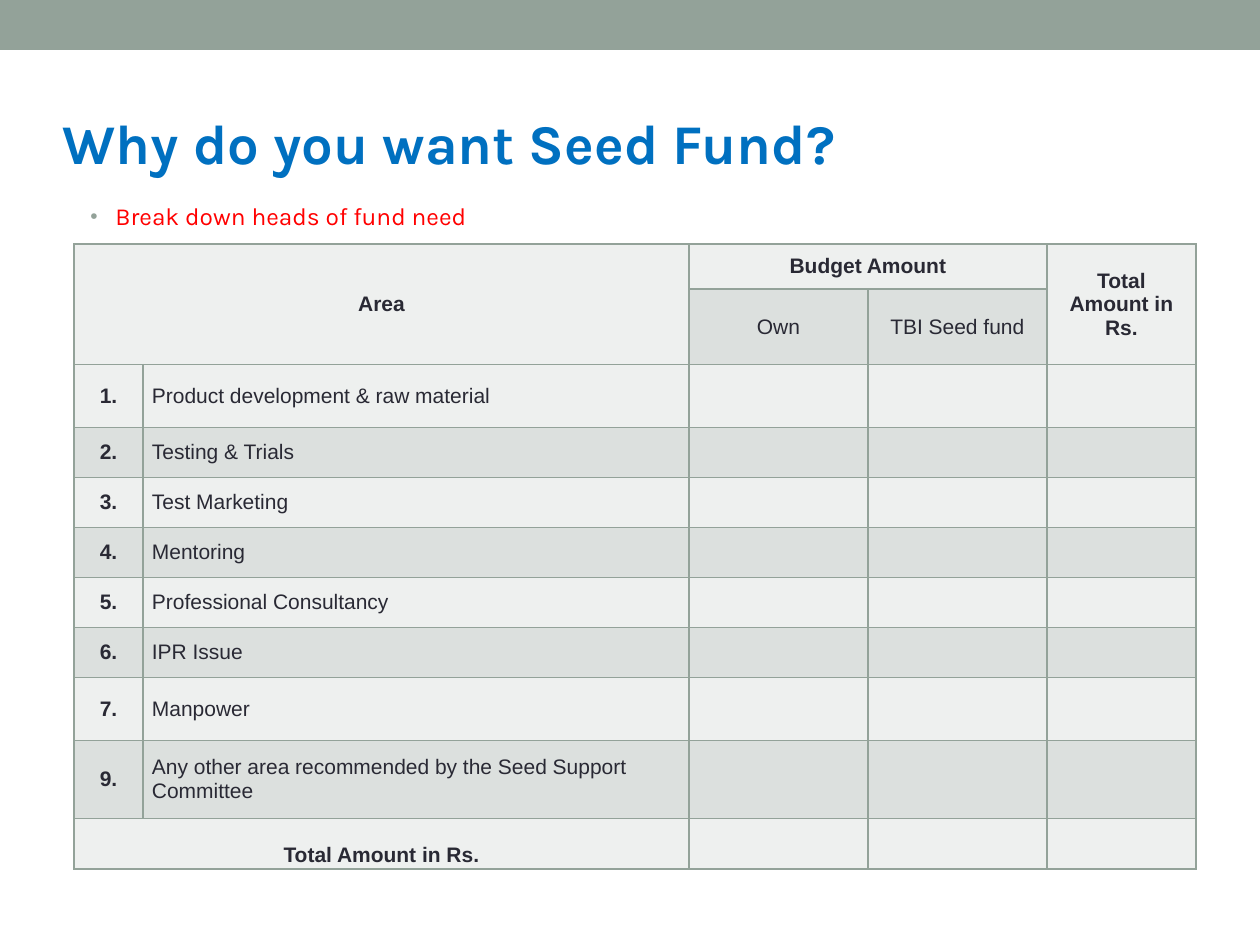
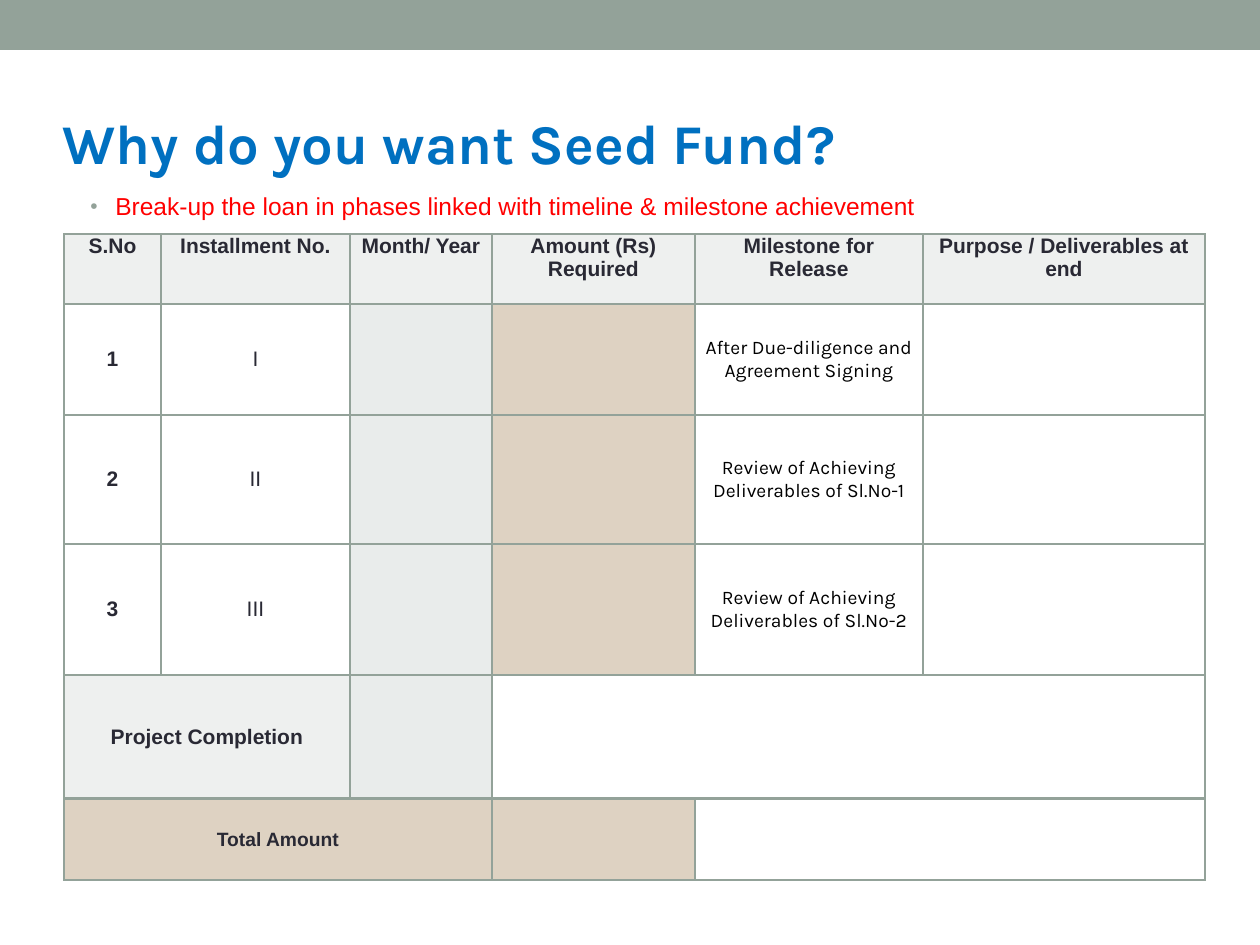
from lxml import etree
from pptx import Presentation
from pptx.dml.color import RGBColor
from pptx.enum.shapes import MSO_SHAPE
from pptx.enum.text import MSO_ANCHOR, PP_ALIGN
from pptx.oxml.ns import qn
from pptx.util import Emu, Pt

SAGE = RGBColor(0x93, 0xA2, 0x99)
BLUE = RGBColor(0x00, 0x70, 0xC0)
RED = RGBColor(0xFF, 0x00, 0x00)
INK = RGBColor(0x29, 0x29, 0x34)
BLACK = RGBColor(0x00, 0x00, 0x00)
PALE = RGBColor(0xEE, 0xF0, 0xEF)
GREY = RGBColor(0xDC, 0xE0, 0xDE)
MIST = RGBColor(0xE9, 0xEC, 0xEB)
SAND = RGBColor(0xDE, 0xD2, 0xC2)
CENTER, LEFT = PP_ALIGN.CENTER, PP_ALIGN.LEFT
MIDDLE, TOP = MSO_ANCHOR.MIDDLE, MSO_ANCHOR.TOP
PX = 914400 / 126  # EMU in one px


def px(*values):
    return [Emu(round(v * PX)) for v in values]


def write(p, text, size=12, font="Arial", color=INK, bold=False, align=LEFT):
    p.alignment = align
    r = p.add_run()
    r.text = text
    r.font.size, r.font.name, r.font.bold = Pt(size), font, bold
    r.font.color.rgb = color
    return r


prs = Presentation()
prs.slide_width, prs.slide_height = px(1260, 945)

# Per slide: subtitle, its font and top, table corner, columns, rows
layouts = [
    ("Break down heads of fund need", "Karla", 195, (74, 244),
     [69, 546, 179, 179, 149],
     [45, 63, 63, 50, 50, 50, 50, 50, 63, 78, 33]),
    ("Break-up the loan in phases linked with timeline & milestone achievement",
     "Arial", 185, (64, 234),
     [97, 189, 142, 203, 228, 282],
     [70, 111, 129, 131, 124, 81]),
]
tables = []
for subtitle, font, top, corner, cols, rows in layouts:
    s = prs.slides.add_slide(prs.slide_layouts[6])

    # Top band
    sp = s.shapes.add_shape(MSO_SHAPE.RECTANGLE, *px(0, 0, 1260, 50))
    sp.shadow.inherit = False
    sp.fill.solid()
    sp.fill.fore_color.rgb = SAGE
    sp.line.fill.background()

    # Title
    tf = s.shapes.add_textbox(*px(63, 107, 1134, 69)).text_frame
    tf.word_wrap = True
    tf.vertical_anchor = MIDDLE
    tf.margin_left, tf.margin_top, tf.margin_right, tf.margin_bottom = px(0, 1, 0, 0)
    tf.paragraphs[0].space_before = Pt(1)
    write(tf.paragraphs[0], "Why do you want Seed Fund?", 32, "Karla", BLUE, True)

    # Bulleted subtitle
    tf = s.shapes.add_textbox(*px(64, top, 1134, 49)).text_frame
    tf.word_wrap = True
    p = tf.paragraphs[0]
    p.space_before = Pt(4.8)
    write(p, subtitle, 14, font, RED)
    pPr = p._p.get_or_add_pPr()
    margin, hang = px(39, -25)
    pPr.set("marL", str(margin))
    pPr.set("indent", str(hang))
    clr = etree.SubElement(pPr, qn("a:buClr"))
    etree.SubElement(clr, qn("a:srgbClr"), val=str(SAGE))
    etree.SubElement(pPr, qn("a:buSzPct"), val="85000")
    etree.SubElement(pPr, qn("a:buFont"), typeface="Arial")
    etree.SubElement(pPr, qn("a:buChar"), char="•")

    # Table grid
    x, y, w, h = px(*corner, sum(cols), sum(rows))
    t = s.shapes.add_table(len(rows), len(cols), x, y, w, h).table
    t.first_row = t.horz_banding = False
    for col, width in zip(t.columns, px(*cols)):
        col.width = width
    for row, height in zip(t.rows, px(*rows)):
        row.height = height
    for cell in t.iter_cells():
        cell.margin_left, cell.margin_top, cell.margin_right, cell.margin_bottom = px(9, 0, 9, 0)
        cell.vertical_anchor = MIDDLE
        for side in ("lnL", "lnR", "lnT", "lnB"):
            ln = etree.SubElement(cell._tc.get_or_add_tcPr(), qn("a:" + side), w="12700")
            fill = etree.SubElement(ln, qn("a:solidFill"))
            etree.SubElement(fill, qn("a:srgbClr"), val=str(SAGE))
        cell.fill.background()
    tables.append(t)

budget, phases = tables

# Budget: fills alternate by row, the header cells stay pale
for i in range(11):
    for j in range(5):
        cell = budget.cell(i, j)
        cell.fill.solid()
        cell.fill.fore_color.rgb = GREY if i % 2 and (i > 1 or j in (2, 3)) else PALE
for r1, c1, r2, c2 in [(0, 0, 1, 1), (0, 2, 0, 3), (0, 4, 1, 4), (10, 0, 10, 1)]:
    budget.cell(r1, c1).merge(budget.cell(r2, c2))

for i, j, text, bold in [
    (0, 0, "Area", True),
    (0, 2, "Budget Amount", True),
    (0, 4, "Total Amount in Rs.", True),
    (1, 2, "Own", False),
    (1, 3, "TBI Seed fund", False),
    (10, 0, "Total Amount in Rs.", True),
]:
    write(budget.cell(i, j).text_frame.paragraphs[0], text, bold=bold, align=CENTER)
p = budget.cell(10, 0).text_frame.paragraphs[0]
p.line_spacing = 2.0
p.space_before = p.space_after = Pt(6)

areas = [
    ("1.", "Product development & raw material"),
    ("2.", "Testing & Trials"),
    ("3.", "Test Marketing"),
    ("4.", "Mentoring"),
    ("5.", "Professional Consultancy"),
    ("6.", "IPR Issue"),
    ("7.", "Manpower"),
    ("9.", "Any other area recommended by the Seed Support Committee"),
]
for i, (number, area) in enumerate(areas, 2):
    write(budget.cell(i, 0).text_frame.paragraphs[0], number, bold=True, align=CENTER)
    write(budget.cell(i, 1).text_frame.paragraphs[0], area)

# Phases: header row
headers = ["S.No", "Installment No.", "Month/ Year", "Amount (Rs)\nRequired",
           "Milestone for Release", "Purpose / Deliverables at end"]
for j, header in enumerate(headers):
    cell = phases.cell(0, j)
    cell.vertical_anchor = TOP
    tf = cell.text_frame
    for k, line in enumerate(header.split("\n")):
        p = tf.add_paragraph() if k else tf.paragraphs[0]
        write(p, line, bold=True, align=CENTER)

# Phases: installments
milestones = ["After Due-diligence and Agreement Signing",
              "Review of Achieving Deliverables of Sl.No-1",
              "Review of Achieving Deliverables of Sl.No-2"]
for i, milestone in enumerate(milestones, 1):
    write(phases.cell(i, 0).text_frame.paragraphs[0], str(i), bold=True, align=CENTER)
    write(phases.cell(i, 1).text_frame.paragraphs[0], "I" * i, align=CENTER)
    write(phases.cell(i, 4).text_frame.paragraphs[0], milestone, 11, "Karla", BLACK, align=CENTER)

# Phases: closing rows
write(phases.cell(4, 0).text_frame.paragraphs[0], "Project Completion", bold=True, align=CENTER)
write(phases.cell(5, 0).text_frame.paragraphs[0], "Total Amount", 11, bold=True, align=CENTER)

# Phases: fills, as row range, column range, colour
for rows, cols, color in [
    (range(1), range(6), PALE),
    (range(4, 5), range(2), PALE),
    (range(1, 5), range(2, 3), MIST),
    (range(1, 4), range(3, 4), SAND),
    (range(5, 6), range(4), SAND),
]:
    for i in rows:
        for j in cols:
            phases.cell(i, j).fill.solid()
            phases.cell(i, j).fill.fore_color.rgb = color

# Phases: heavier rule above the total
for j in range(6):
    for i, side in ((4, "lnB"), (5, "lnT")):
        phases.cell(i, j)._tc.tcPr.find(qn("a:" + side)).set("w", "25400")
for i, first, last in [(4, 0, 1), (4, 3, 5), (5, 0, 2), (5, 4, 5)]:
    phases.cell(i, first).merge(phases.cell(i, last))

prs.save("out.pptx")
